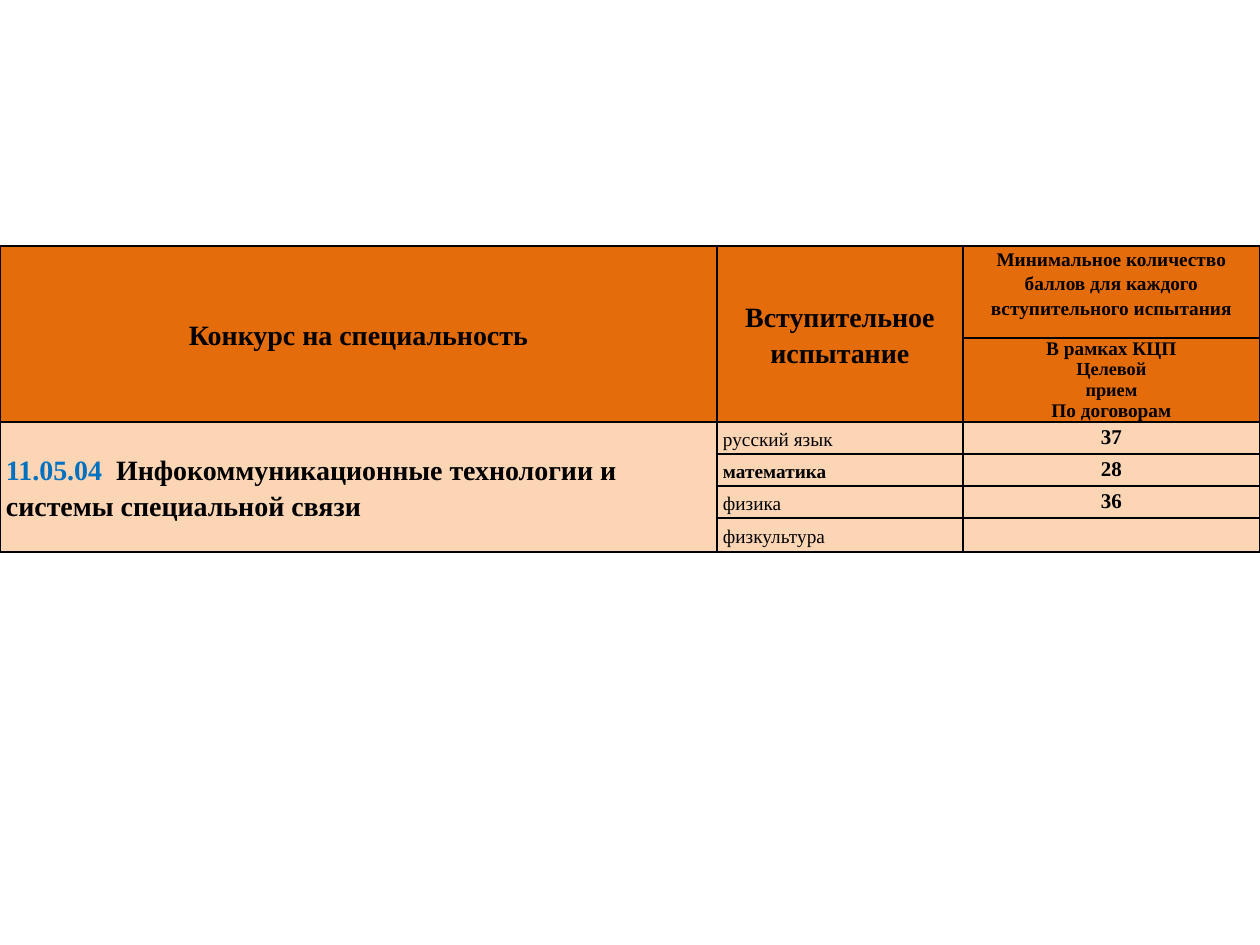
"""Build a slide with a table of minimum entrance exam scores."""
from lxml import etree
from pptx import Presentation
from pptx import util as u
from pptx.dml.color import RGBColor
from pptx.enum import text
from pptx.oxml.ns import qn

SCALE = 914400 // 126
FONT = "Times New Roman"
BLACK, BLUE = "000000", "0070C0"
ORANGE, PEACH = "E46C0A", "FCD5B5"
COLUMN_WIDTHS = [717, 246, 297]
ROW_HEIGHTS = [92, 84, 32, 32, 32, 34]
EXAMS = [
    ("русский язык", False, "37"),
    ("математика", True, "28"),
    ("физика", False, "36"),
    ("физкультура", False, ""),
]
CONDITIONS = [("В рамках КЦП", 11), ("Целевой", 10.5), ("прием", 10.5), ("По договорам", 11)]


def px(length):
    """Convert pixels to EMU."""
    return u.Emu(length * SCALE)


def color(value):
    """Convert a hex string to a colour."""
    return RGBColor.from_string(value)


def add_run(paragraph, content, size, bold=True, ink=BLACK):
    """Add one formatted run to a paragraph."""
    run = paragraph.add_run()
    run.text = content
    run.font.name = FONT
    run.font.size = u.Pt(size)
    run.font.bold = bold
    run.font.color.rgb = color(ink)


def format_paragraph(paragraph, centered=True, spacing=1.15, after=0):
    """Set the alignment and spacing of a paragraph."""
    paragraph.alignment = text.PP_ALIGN.CENTER if centered else text.PP_ALIGN.LEFT
    paragraph.line_spacing = spacing
    paragraph.space_after = u.Pt(after)


def write_cell(cell, runs, centered=True, middle=True, after=0):
    """Write one paragraph of runs into a cell."""
    cell.vertical_anchor = text.MSO_ANCHOR.MIDDLE if middle else text.MSO_ANCHOR.TOP
    paragraph = cell.text_frame.paragraphs[0]
    format_paragraph(paragraph, centered, after=after)
    for run in runs:
        add_run(paragraph, *run)


def write_conditions(cell):
    """List the admission conditions on separate lines with a hanging indent."""
    frame = cell.text_frame
    for index, (content, size) in enumerate(CONDITIONS):
        paragraph = frame.add_paragraph() if index else frame.paragraphs[0]
        format_paragraph(paragraph, spacing=1.0)
        properties = paragraph._p.get_or_add_pPr()
        properties.set("marL", "0")
        properties.set("indent", str(px(-10)))
        add_run(paragraph, content, size)


def style_cell(cell, fill):
    """Set the margins, black borders and fill of a cell."""
    cell.margin_left = cell.margin_right = px(6)
    cell.margin_top = cell.margin_bottom = 0
    properties = cell._tc.get_or_add_tcPr()
    for side in ("a:lnL", "a:lnR", "a:lnT", "a:lnB"):
        line = etree.SubElement(properties, qn(side), w=str(u.Pt(1)))
        solid = etree.SubElement(line, qn("a:solidFill"))
        etree.SubElement(solid, qn("a:srgbClr"), val=BLACK)
    cell.fill.solid()
    cell.fill.fore_color.rgb = color(fill)


def add_score_table(slide):
    """Add the empty styled table with its merged cells."""
    rows, columns = len(ROW_HEIGHTS), len(COLUMN_WIDTHS)
    frame = slide.shapes.add_table(
        rows, columns, 0, px(246), px(sum(COLUMN_WIDTHS)), px(sum(ROW_HEIGHTS)))
    table = frame.table
    for column, width in zip(table.columns, COLUMN_WIDTHS):
        column.width = px(width)
    for index, (row, height) in enumerate(zip(table.rows, ROW_HEIGHTS)):
        row.height = px(height)
        for cell in row.cells:
            style_cell(cell, ORANGE if index < 2 else PEACH)
            cell.text_frame.paragraphs[0]._p.get_or_add_endParaRPr().set("sz", "1100")
    for column in (0, 1):
        table.cell(0, column).merge(table.cell(1, column))
    table.cell(2, 0).merge(table.cell(5, 0))
    return table


def fill_headings(table):
    """Write the heading cells."""
    write_cell(table.cell(0, 0), [("Конкурс на специальность", 16)], after=10)
    write_cell(table.cell(0, 1), [("Вступительное испытание", 16)], after=10)
    requirement = "Минимальное количество баллов для каждого вступительного испытания"
    write_cell(table.cell(0, 2), [(requirement, 11)], middle=False, after=10)
    write_conditions(table.cell(1, 2))


def fill_scores(table):
    """Write the speciality with its exams and scores."""
    speciality = [
        ("11.05.04  ", 16, True, BLUE),
        ("Инфокоммуникационные технологии и системы специальной связи", 16),
    ]
    write_cell(table.cell(2, 0), speciality, centered=False, after=10)
    for row, (exam, bold, score) in enumerate(EXAMS, start=2):
        write_cell(table.cell(row, 1), [(exam, 11, bold)], centered=False)
        if score:
            write_cell(table.cell(row, 2), [(score, 12)], middle=False)


def main():
    """Build and save the presentation."""
    presentation = Presentation()
    presentation.slide_width = px(1260)
    presentation.slide_height = px(945)
    slide = presentation.slides.add_slide(presentation.slide_layouts[6])
    table = add_score_table(slide)
    fill_headings(table)
    fill_scores(table)
    presentation.save("out.pptx")


if __name__ == "__main__":
    main()
